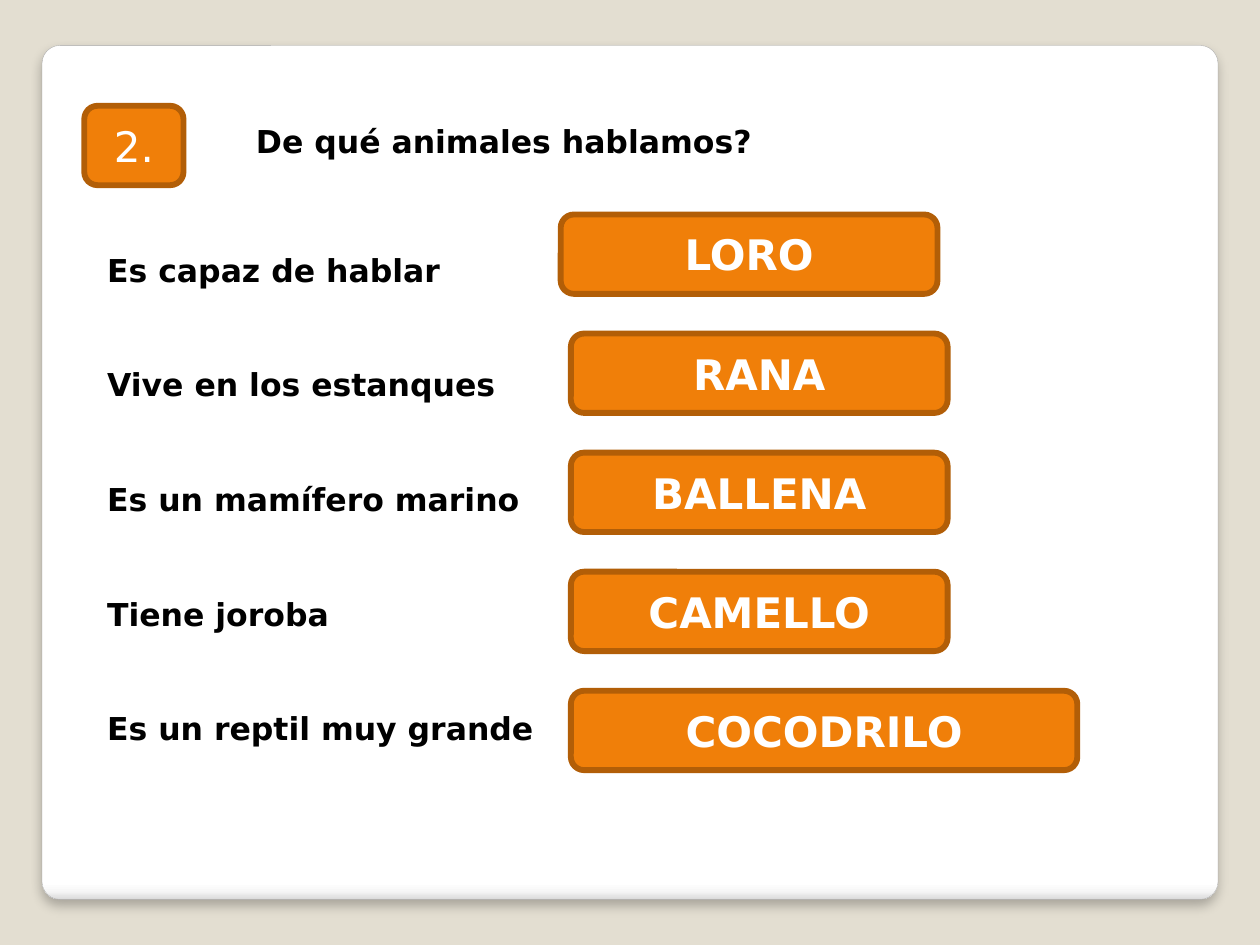
import lxml.etree
import pptx
import pptx.dml.color
import pptx.enum.shapes
import pptx.enum.text
import pptx.oxml.ns
import pptx.util
from dataclasses import dataclass

Pt = pptx.util.Pt
qn = pptx.oxml.ns.qn
ALIGN = pptx.enum.text.PP_ALIGN
ANCHOR = pptx.enum.text.MSO_ANCHOR


@dataclass
class Theme:
    font: str = "DejaVu Sans"
    background: str = "E3DED1"
    card_line: str = "A4A4A4"
    card_stops: tuple = ((0, "FFFFFF"), (98, "FFFFFF"), (99, "F7F7F7"), (100, "DADADA"))
    shadow: str = "000000"
    orange: str = "F07F09"
    orange_line: str = "B25E07"
    dark_text: str = "000000"
    light_text: str = "FFFFFF"
    text_size: int = 18
    button_size: int = 24


def color(code):
    return pptx.dml.color.RGBColor.from_string(code)


def add_xml(parent, tag, **attributes):
    return lxml.etree.SubElement(
        parent, qn(tag), {name: str(value) for name, value in attributes.items()})


class SlideBuilder:
    def __init__(self, presentation, theme):
        self.theme = theme
        self.slide = presentation.slides.add_slide(presentation.slide_layouts[1])
        fill = self.slide.background.fill
        fill.solid()
        fill.fore_color.rgb = color(theme.background)

    def rounded_box(self, left, top, width, height, line_color, line_width):
        shape = self.slide.shapes.add_shape(
            pptx.enum.shapes.MSO_SHAPE.ROUNDED_RECTANGLE,
            Pt(left), Pt(top), Pt(width), Pt(height))
        shape.shadow.inherit = False
        shape.line.color.rgb = color(line_color)
        shape.line.width = Pt(line_width)
        return shape

    def card(self, left, top, width, height):
        shape = self.rounded_box(left, top, width, height, self.theme.card_line, 0.16)
        shape.adjustments[0] = 0.021
        # Gradient that darkens only at the bottom edge
        shape.fill.gradient()
        shape.fill.gradient_angle = 270
        properties = shape._element.spPr
        stops = properties.find(".//" + qn("a:gsLst"))
        for stop in list(stops):
            stops.remove(stop)
        for position, code in self.theme.card_stops:
            stop = add_xml(stops, "a:gs", pos=position * 1000)
            add_xml(stop, "a:srgbClr", val=code)
        # Soft shadow below
        shadow = add_xml(properties.find(qn("a:effectLst")), "a:outerShdw",
                         blurRad=Pt(6), dist=Pt(4), dir=90 * 60000, rotWithShape=0)
        shade = add_xml(shadow, "a:srgbClr", val=self.theme.shadow)
        add_xml(shade, "a:alpha", val=25000)
        # Behind the placeholders
        self.slide.shapes._spTree.insert(2, shape._element)

    def button(self, text, left, top, width, height, bold=True):
        shape = self.rounded_box(left, top, width, height, self.theme.orange_line, 3.35)
        shape.fill.solid()
        shape.fill.fore_color.rgb = color(self.theme.orange)
        shape.text_frame.text = text
        shape.text_frame.vertical_anchor = ANCHOR.MIDDLE
        self.format_text(shape.text_frame, self.theme.button_size,
                         self.theme.light_text, ALIGN.CENTER, bold)

    def placeholder(self, shape, lines, left, top, width, height, gap=0):
        shape.left, shape.top = Pt(left), Pt(top)
        shape.width, shape.height = Pt(width), Pt(height)
        frame = shape.text_frame
        frame.text = "\n".join(lines)
        frame.word_wrap = False
        frame.auto_size = pptx.enum.text.MSO_AUTO_SIZE.NONE
        frame.vertical_anchor = ANCHOR.TOP
        self.format_text(frame, self.theme.text_size, self.theme.dark_text, ALIGN.LEFT)
        for paragraph in frame.paragraphs:
            paragraph.space_before = Pt(0)
            paragraph.space_after = Pt(gap)
            properties = paragraph._p.get_or_add_pPr()
            properties.set("marL", "0")
            properties.set("indent", "0")
            add_xml(properties, "a:buNone")

    def format_text(self, frame, size, text_color, alignment, bold=True):
        for paragraph in frame.paragraphs:
            paragraph.alignment = alignment
            for run in paragraph.runs:
                run.font.name = self.theme.font
                run.font.size = Pt(size)
                run.font.bold = bold
                run.font.color.rgb = color(text_color)


def main():
    presentation = pptx.Presentation()
    presentation.slide_width, presentation.slide_height = Pt(720), Pt(540)
    builder = SlideBuilder(presentation, Theme())
    title, body = builder.slide.placeholders
    builder.card(24, 26, 672, 488)

    # Question number and heading
    button_height = 45.36
    builder.button("2.", 48.2, 60.5, 56.7, button_height, bold=False)
    builder.placeholder(title, ["De qué animales hablamos?"], 139, 66.2, 299.5, 29)

    # Clues, with the left edge, width and name of each answer
    answers = [
        ("Es capaz de hablar", "LORO", 320.4, 215.3),
        ("Vive en los estanques", "RANA", 326.2, 215.3),
        ("Es un mamífero marino", "BALLENA", 326.2, 215.3),
        ("Tiene joroba", "CAMELLO", 326.2, 215.3),
        ("Es un reptil muy grande", "COCODRILO", 326.2, 289.4),
    ]
    builder.placeholder(body, [clue for clue, *_ in answers],
                        54, 139.7, 259.2, 290.9, gap=43.9)
    first_top, pitch = 122.6, 68.04
    for row, (_, name, left, width) in enumerate(answers):
        builder.button(name, left, first_top + row * pitch, width, button_height)

    presentation.save("out.pptx")


if __name__ == "__main__":
    main()
